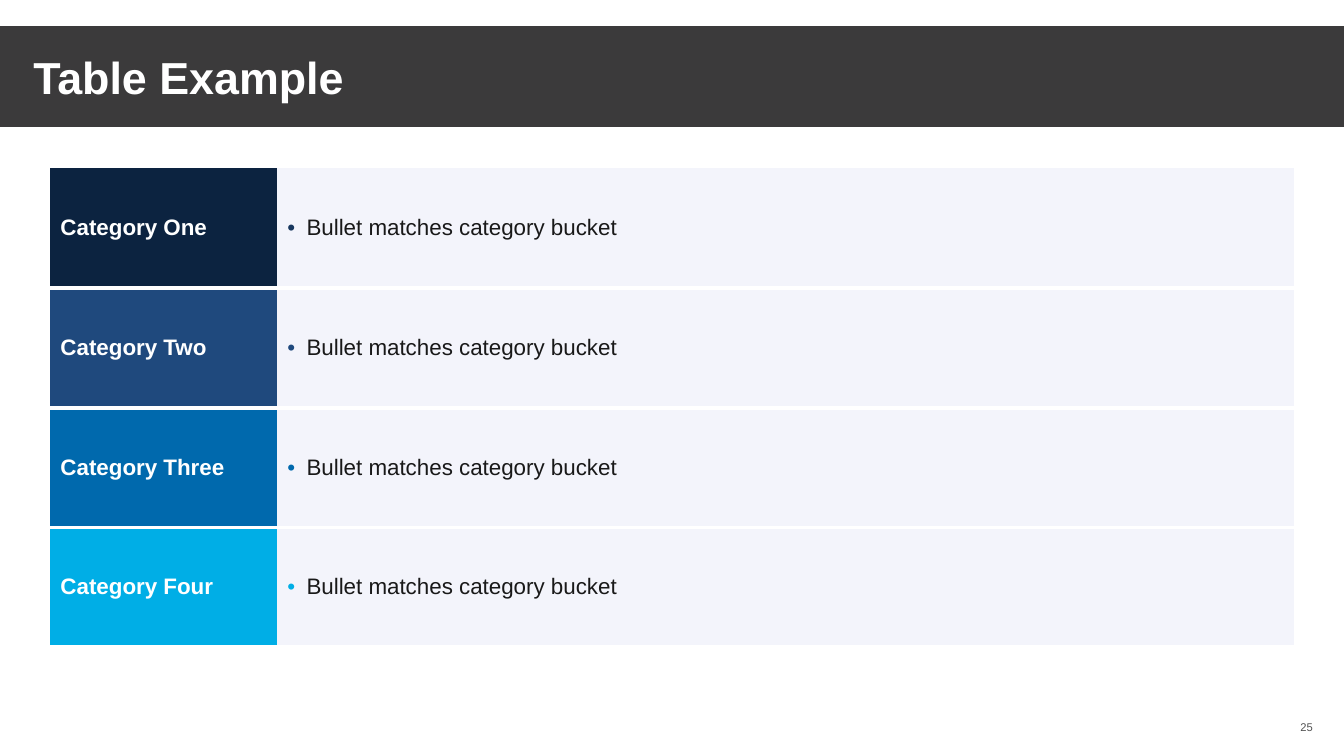
from lxml.etree import SubElement
from pptx import Presentation
from pptx.dml.color import RGBColor
from pptx.enum.shapes import MSO_SHAPE
from pptx.enum.text import MSO_ANCHOR, MSO_AUTO_SIZE, PP_ALIGN
from pptx.oxml import parse_xml
from pptx.oxml.ns import nsdecls, qn
from pptx.util import Inches, Pt

COLORS = {
    "white": "FFFFFF", "band": "3B3A3B", "number": "525252",
    "text": "191919", "row": "F3F4FB", "navy": "0C2340",
    "navy_bullet": "17375E", "indigo": "1F497D", "blue": "0069AD", "cyan": "00AEE6",
}
BULLET_TEXT = "Bullet matches category bucket"
# Category, fill colour, bullet colour
CATEGORIES = [
    ("Category One", "navy", "navy_bullet"),
    ("Category Two", "indigo", "indigo"),
    ("Category Three", "blue", "blue"),
    ("Category Four", "cyan", "cyan"),
]
NO_STYLE_NO_GRID = "{2D5ABB26-0587-4C30-8999-92F81FD0307C}"


def rgb(name):
    return RGBColor.from_string(COLORS[name])


def write(tf, text, size=16, color="text", bold=False, align=PP_ALIGN.LEFT):
    tf.word_wrap = True
    tf.vertical_anchor = MSO_ANCHOR.MIDDLE
    p = tf.paragraphs[0]
    p.alignment = align
    r = p.add_run()
    r.text = text
    r.font.name = "Arial"
    r.font.size = Pt(size)
    r.font.bold = bold
    r.font.color.rgb = rgb(color)
    return p


def add_bullet(p, color):
    pPr = p._p.get_or_add_pPr()
    indent = Inches(0.19)
    pPr.set("marL", str(indent))
    pPr.set("indent", str(-indent))
    clr = SubElement(pPr, qn("a:buClr"))
    SubElement(clr, qn("a:srgbClr"), val=COLORS[color])
    SubElement(pPr, qn("a:buFont"), typeface="Arial")
    SubElement(pPr, qn("a:buChar"), char="•")


def format_cell(cell, fill):
    """Fill the cell and draw a white rule below it."""
    cell.vertical_anchor = MSO_ANCHOR.MIDDLE
    cell.fill.solid()
    cell.fill.fore_color.rgb = rgb(fill)
    rule = parse_xml(
        f'<a:lnB {nsdecls("a")} w="{Pt(3)}"><a:solidFill>'
        f'<a:srgbClr val="{COLORS["white"]}"/></a:solidFill></a:lnB>')
    cell._tc.get_or_add_tcPr().insert(0, rule)


def add_header(s, text, x, y, w, h):
    band = s.shapes.add_shape(MSO_SHAPE.RECTANGLE, x, y, w, h)
    band.shadow.inherit = False
    band.fill.solid()
    band.fill.fore_color.rgb = rgb("band")
    band.line.fill.background()

    title = s.shapes.title
    title.element.addprevious(band.element)
    title.left, title.top = x + Inches(0.33), y
    title.width, title.height = w - Inches(1.17), h
    tf = title.text_frame
    tf.auto_size = MSO_AUTO_SIZE.NONE
    tf.margin_left = tf.margin_right = 0
    write(tf, text, size=32, color="white", bold=True)


def add_category_table(s, x, y, w, h):
    frame = s.shapes.add_table(len(CATEGORIES), 2, x, y, w, h)
    table = frame.table
    table.first_row = table.horz_banding = False
    table._tbl.tblPr.find(qn("a:tableStyleId")).text = NO_STYLE_NO_GRID
    label_width = Inches(2.25)
    table.columns[0].width = label_width
    table.columns[1].width = w - label_width

    for row, (name, fill, bullet) in zip(table.rows, CATEGORIES):
        label, detail = row.cells
        format_cell(label, fill)
        write(label.text_frame, name, color="white", bold=True)
        format_cell(detail, "row")
        add_bullet(write(detail.text_frame, BULLET_TEXT), bullet)


def add_slide_number(s, number, x, y, w, h):
    box = s.shapes.add_textbox(x, y, w, h)
    write(box.text_frame, number, size=8, color="number", align=PP_ALIGN.CENTER)


def main():
    prs = Presentation()
    prs.slide_width, prs.slide_height = Inches(13.33), Inches(7.5)
    s = prs.slides.add_slide(prs.slide_layouts[5])
    add_header(s, "Table Example", 0, Inches(0.26), prs.slide_width, Inches(1))
    add_slide_number(s, "25", Inches(12.75), Inches(7.07), Inches(0.42), Inches(0.28))
    add_category_table(s, Inches(0.5), Inches(1.67), Inches(12.33), Inches(4.75))
    prs.save("out.pptx")


if __name__ == "__main__":
    main()
